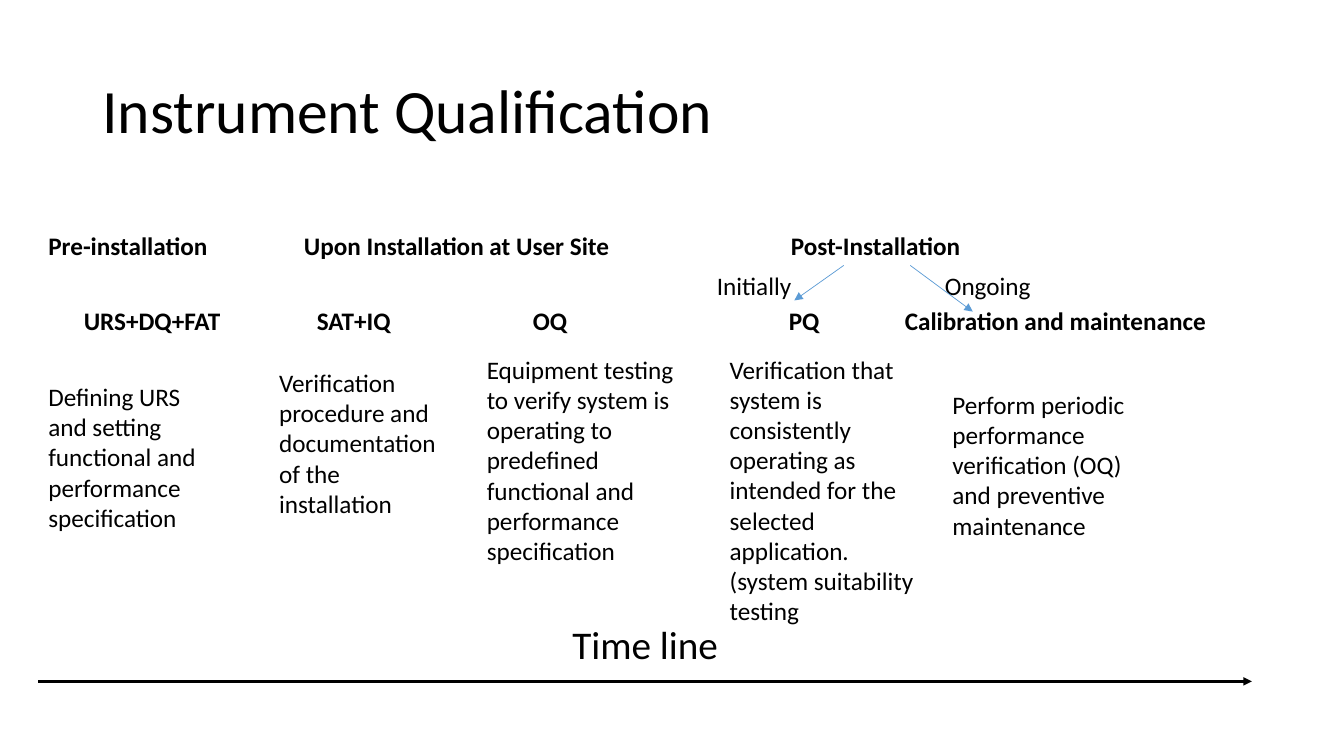
from pptx import Presentation
from pptx.dml.color import RGBColor
from pptx.enum.shapes import MSO_CONNECTOR
from pptx.enum.text import MSO_ANCHOR, PP_ALIGN
from pptx.oxml.ns import qn
from pptx.util import Pt
from lxml import etree

LEFT, MID = PP_ALIGN.LEFT, PP_ALIGN.CENTER
TOP, CENTER = MSO_ANCHOR.TOP, MSO_ANCHOR.MIDDLE
STRAIGHT = MSO_CONNECTOR.STRAIGHT
FONT = "Calibri"
COLORS = {"ink": "000000", "branch": "5B9BD5"}
ROW = 29  # height of a one-line label

# Left offset in the region, width, text
PHASES = [
    (0, 150, "Pre-installation"),
    (182.6, 250, "Upon Installation at User Site"),
    (530.4, 150, "Post-Installation"),
]
BRANCHES = [(477.6, 75, "Initially"), (640.4, 85, "Ongoing")]
STEPS = [
    (25.4, 125, "URS+DQ+FAT"),
    (191.8, 80, "SAT+IQ"),
    (346.1, 50, "OQ"),
    (529, 50, "PQ"),
    (611.8, 240, "Calibration and maintenance"),
]
# Left and top offset in the region, width, height, text
DETAILS = [
    (0, 19.6, 131, 117,
     "Defining URS and setting functional and performance specification"),
    (164.9, 9.5, 131, 117,
     "Verification procedure and documentation of the installation"),
    (313.2, 0.2, 150.5, 160,
     "Equipment testing to verify system is operating to predefined "
     "functional and performance specification"),
    (486.7, 0, 150.5, 204,
     "Verification that system is consistently operating as intended for "
     "the selected application. (system suitability testing"),
    (645.8, 25.2, 163.5, 117,
     "Perform periodic performance verification (OQ) and preventive "
     "maintenance"),
]


def write(shape, text, size=18, bold=False, align=LEFT, anchor=TOP, space=1.0):
    frame = shape.text_frame
    frame.word_wrap = True
    frame.vertical_anchor = anchor
    para = frame.paragraphs[0]
    para.alignment = align
    para.line_spacing = space
    run = para.add_run()
    run.text = text
    font = run.font
    font.name, font.size, font.bold = FONT, Pt(size), bold
    font.color.rgb = RGBColor.from_string(COLORS["ink"])


def label(slide, box, text, **style):
    shape = slide.shapes.add_textbox(*map(Pt, box))
    write(shape, text, **style)


def arrow(slide, start, end, color, width):
    line = slide.shapes.add_connector(STRAIGHT, *map(Pt, start + end))
    line.line.color.rgb = RGBColor.from_string(COLORS[color])
    line.line.width = Pt(width)
    tip = etree.SubElement(line.line._get_or_add_ln(), qn("a:tailEnd"))
    tip.set("type", "triangle")
    etree.SubElement(line._element.spPr, qn("a:effectLst"))


def add_title(slide, box):
    title = slide.shapes.title
    title.left, title.top, title.width, title.height = map(Pt, box)
    write(title, "Instrument Qualification", size=44, anchor=CENTER, space=0.9)


def add_row(slide, left, top, items, bold=False):
    for dx, width, text in items:
        label(slide, (left + dx, top, width, ROW), text, bold=bold)


def add_stages(slide, left, top):
    # Phases, the split after installation, and the steps
    add_row(slide, left, top, PHASES, bold=True)
    add_row(slide, left, top + ROW, BRANCHES)
    add_row(slide, left, top + 54, STEPS, bold=True)
    fork = top + ROW
    for x, end, drop in ((575.3, 540, 25), (622.8, 667.4, 33)):
        arrow(slide, (left + x, fork), (left + end, fork + drop), "branch", 0.5)


def add_details(slide, left, top):
    for dx, dy, width, height, text in DETAILS:
        label(slide, (left + dx, top + dy, width, height), text)


def add_timeline(slide, left, top, width):
    label(slide, (left, top, width, 42), "Time line", size=28, align=MID)
    base = top + 47.5
    arrow(slide, (left, base), (left + width, base), "ink", 2)


def main():
    deck = Presentation()
    deck.slide_width, deck.slide_height = Pt(960), Pt(540)
    slide = deck.slides.add_slide(deck.slide_layouts[5])
    add_title(slide, (66, 28.8, 828, 104.4))
    add_stages(slide, 27.4, 160.6)
    add_details(slide, 27.4, 249.2)
    add_timeline(slide, 27.4, 439.2, 866.8)
    deck.save("out.pptx")


if __name__ == "__main__":
    main()
